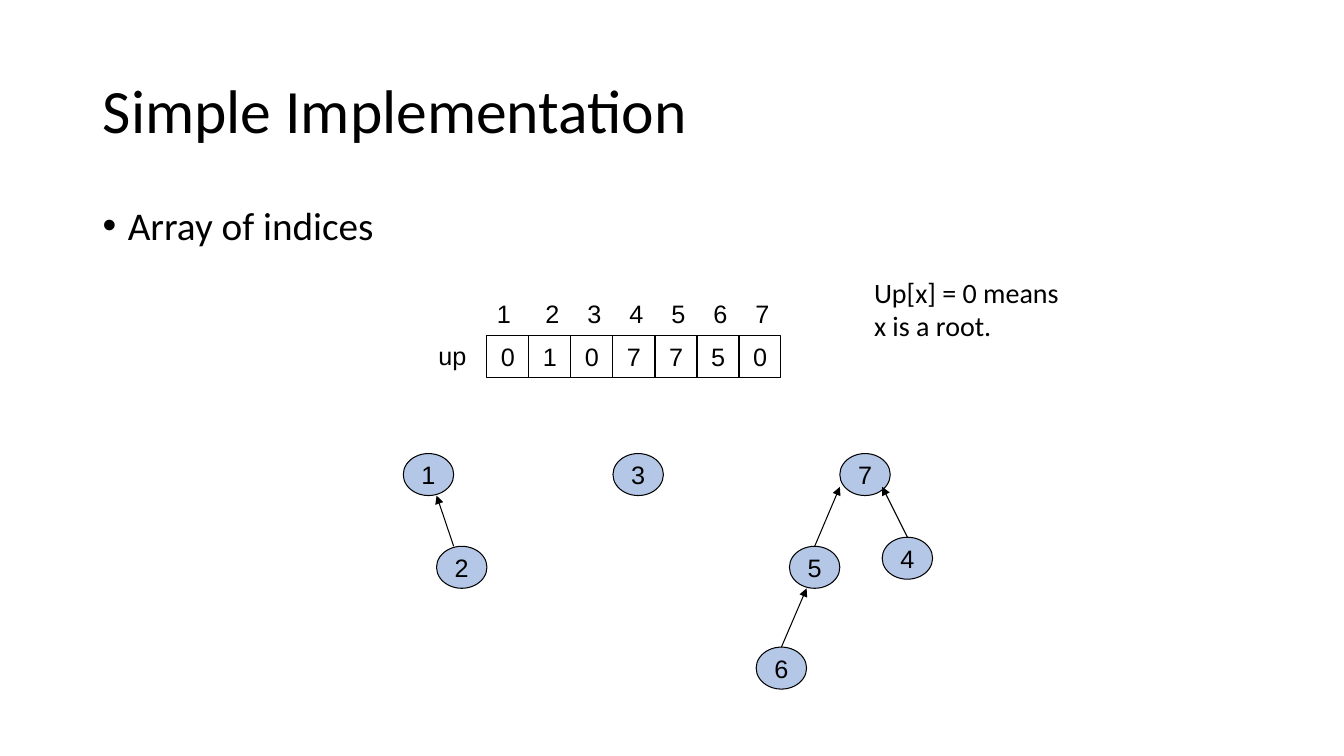
from lxml import etree
from pptx import Presentation
from pptx.dml.color import RGBColor
from pptx.enum import shapes, text
from pptx.oxml.ns import qn
from pptx.util import Inches, Pt

CELL = 5 / 12
WIDE = 0.5
BLACK = "000000"
BLUE = "B4C7E7"


def paint(color, code):
    color.rgb = RGBColor.from_string(code)


def write(frame, words, size=18, font="Arial", align="l", anchor="t",
          wrap=True, line=None, bullet=None, tabs=()):
    frame.word_wrap = wrap
    frame.auto_size = text.MSO_AUTO_SIZE.NONE
    frame.vertical_anchor = {
        "t": text.MSO_ANCHOR.TOP, "m": text.MSO_ANCHOR.MIDDLE}[anchor]
    para = frame.paragraphs[0]
    para.text = words
    para.alignment = {"l": text.PP_ALIGN.LEFT, "c": text.PP_ALIGN.CENTER}[align]
    props = para._p.get_or_add_pPr()
    if bullet:
        props.set("marL", str(Inches(0.25)))
        props.set("indent", str(Inches(-0.25)))
        etree.SubElement(props, qn("a:buFont"), typeface="Arial")
        etree.SubElement(props, qn("a:buChar"), char=bullet)
    if tabs:
        stops = etree.SubElement(props, qn("a:tabLst"))
        for stop in tabs:
            etree.SubElement(stops, qn("a:tab"), pos=str(Inches(stop)), algn="l")
    if line:
        para.line_spacing = line
    for run in para.runs:
        run.font.size = Pt(size)
        run.font.name = font
        paint(run.font.color, BLACK)


def label(slide, box, words, **style):
    area = slide.shapes.add_textbox(*map(Inches, box))
    write(area.text_frame, words, **style)


def block(slide, kind, box, words, fill=None):
    shape = slide.shapes.add_shape(kind, *map(Inches, box))
    shape.shadow.inherit = False
    if fill:
        shape.fill.solid()
        paint(shape.fill.fore_color, fill)
    else:
        shape.fill.background()
    paint(shape.line.color, BLACK)
    shape.line.width = Pt(0.75)
    write(shape.text_frame, words, align="c", anchor="m", wrap=False)


def arrow(slide, start, end):
    link = slide.shapes.add_connector(
        shapes.MSO_CONNECTOR.STRAIGHT, *map(Inches, start + end))
    paint(link.line.color, BLACK)
    link.line.width = Pt(0.75)
    etree.SubElement(link.line._get_or_add_ln(), qn("a:tailEnd"), type="triangle")
    etree.SubElement(link._element.spPr, qn("a:effectLst"))


def heading(slide, box):
    title = slide.shapes.title
    title.left, title.top, title.width, title.height = map(Inches, box)
    write(title.text_frame, "Simple Implementation", size=44, font="Calibri",
          anchor="m", line=0.9)


def array(slide, left, top, values):
    for i, value in enumerate(values):
        block(slide, shapes.MSO_SHAPE.RECTANGLE,
              (left + i * CELL, top, CELL, CELL), value)
    count = len(values)
    label(slide, (left, top - CELL, count * CELL + 0.02, 0.4),
          "\t".join(str(i + 1) for i in range(count)), wrap=False,
          tabs=[0.48 + i * CELL for i in range(count - 1)])
    label(slide, (left - 0.58, top, 0.48, 0.4), "up", wrap=False)


def forest(slide, left, top):
    nodes = {
        "1": (0, 0), "2": (0.33, 0.92), "3": (2.08, 0), "4": (4.75, 0.83),
        "5": (3.83, 0.92), "6": (3.5, 1.92), "7": (4.33, 0)}
    links = [
        ("2", 0.17, "1", 0.33, CELL), ("5", 0.25, "7", 0, 0.33),
        ("4", 0.25, "7", 0.42, 0.33), ("6", 0.25, "5", 0.17, CELL)]
    spots = {name: (left + x, top + y) for name, (x, y) in nodes.items()}
    for name, spot in spots.items():
        block(slide, shapes.MSO_SHAPE.OVAL, spot + (WIDE, CELL), name, fill=BLUE)
    for child, shift, root, dx, dy in links:
        x, y = spots[child]
        tip = spots[root]
        arrow(slide, (x + shift, y), (tip[0] + dx, tip[1] + dy))


def main():
    deck = Presentation()
    deck.slide_width, deck.slide_height = Inches(13.33), Inches(7.5)
    slide = deck.slides.add_slide(deck.slide_layouts[5])
    heading(slide, (0.92, 0.4, 11.5, 1.45))
    label(slide, (0.92, 2, 11.5, 4.76), "Array of indices", size=28,
          font="Calibri", line=0.9, bullet="•")
    forest(slide, 4, 4.5)
    array(slide, 4.83, 3.33, "0107750")
    label(slide, (8.57, 2.68, 2.05, 0.77), "Up[x] = 0 means\vx is a root.",
          size=20, font="Calibri", wrap=False)
    deck.save("out.pptx")


if __name__ == "__main__":
    main()
